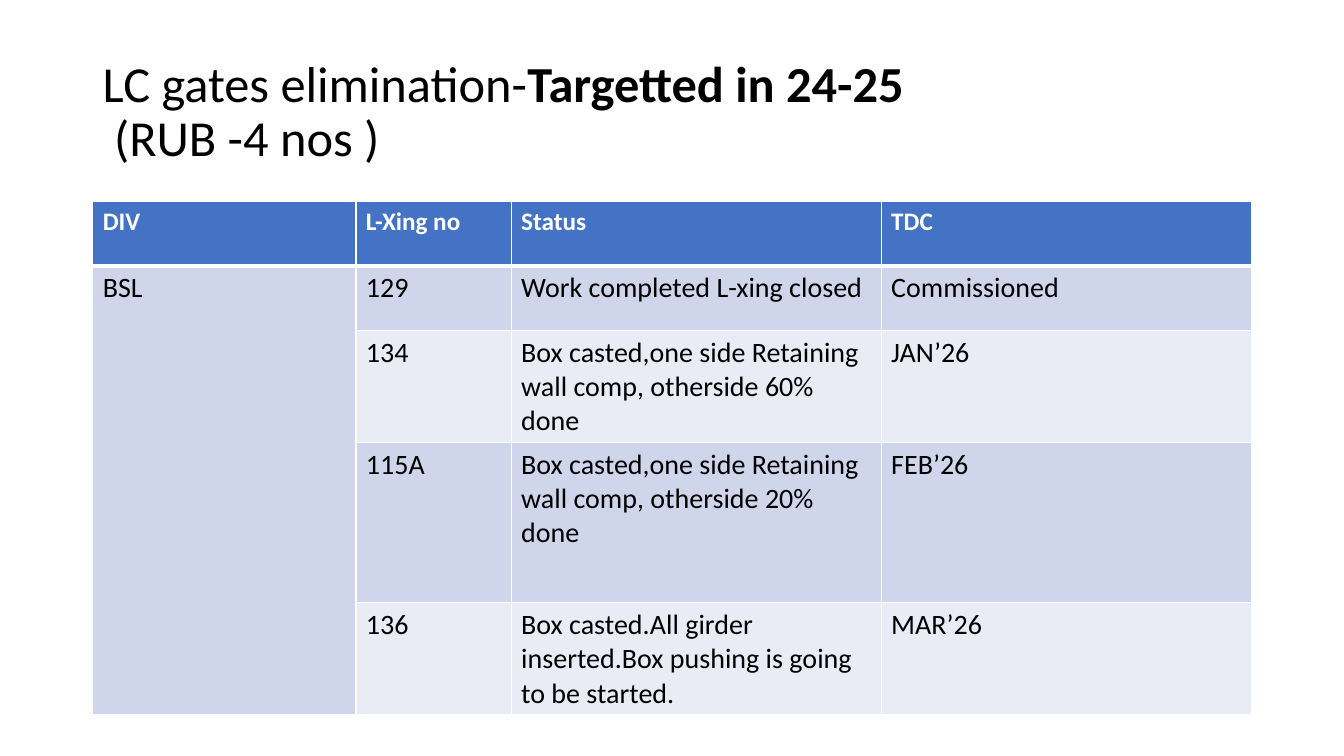
import pptx
import pptx.dml.color
import pptx.enum.text
import pptx.oxml.ns
import pptx.util
from lxml import etree

RGBColor = pptx.dml.color.RGBColor
BLACK = RGBColor(0x00, 0x00, 0x00)
WHITE = RGBColor(0xFF, 0xFF, 0xFF)
HEADER_BLUE = RGBColor(0x44, 0x72, 0xC4)
BANDS = [RGBColor(0xCF, 0xD5, 0xEA), RGBColor(0xE9, 0xEB, 0xF5)]

LEFT, WIDTH = 0.92, 11.5
COLUMNS = [2.61, 1.54, 3.67, 3.67]
ROWS = [0.64, 0.64, 1.11, 1.59, 1.11]


def add_text(para, text, size=20, bold=False, color=BLACK):
    span = para.add_run()
    span.text = text
    span.font.name = "Calibri"
    span.font.size = pptx.util.Pt(size)
    span.font.bold = bold
    span.font.color.rgb = color


def add_border(cell, side, points):
    qn = pptx.oxml.ns.qn
    line = etree.SubElement(cell._tc.get_or_add_tcPr(), qn("a:" + side),
                            w=str(pptx.util.Pt(points)))
    fill = etree.SubElement(line, qn("a:solidFill"))
    etree.SubElement(fill, qn("a:srgbClr"), val=str(WHITE))


deck = pptx.Presentation()
deck.slide_width = pptx.util.Inches(13.33)
deck.slide_height = pptx.util.Inches(7.5)
page = deck.slides.add_slide(deck.slide_layouts[6])

# Title
box = page.shapes.add_textbox(*map(pptx.util.Inches, (LEFT, 0.4, WIDTH, 1.45)))
box.text_frame.word_wrap = True
box.text_frame.vertical_anchor = pptx.enum.text.MSO_ANCHOR.MIDDLE
para = box.text_frame.paragraphs[0]
para.line_spacing = 0.9
add_text(para, "LC gates elimination-", size=36)
add_text(para, "Targetted in 24-25", size=36, bold=True)
para.add_line_break()
add_text(para, " (RUB -4 nos )", size=36)

# Table of level crossings
crossings = [
    ["DIV", "L-Xing no", "Status", "TDC"],
    ["BSL", "129", "Work completed L-xing closed", "Commissioned"],
    ["", "134", "Box casted,one side Retaining wall comp, otherside 60% done", "JAN’26"],
    ["", "115A", "Box casted,one side Retaining wall comp, otherside 20% done", "FEB’26"],
    ["", "136", "Box casted.All girder inserted.Box pushing is going to be started.", "MAR’26"],
]
table = page.shapes.add_table(
    len(ROWS), len(COLUMNS),
    *map(pptx.util.Inches, (LEFT, 2, WIDTH, sum(ROWS)))).table
for column, width in zip(table.columns, COLUMNS):
    column.width = pptx.util.Inches(width)
for row, height in zip(table.rows, ROWS):
    row.height = pptx.util.Inches(height)

for r, texts in enumerate(crossings):
    header = r == 0
    for c, text in enumerate(texts):
        cell = table.cell(r, c)
        for side in ("lnL", "lnR", "lnT", "lnB"):
            heavy = (header and side == "lnB") or (r == 1 and side == "lnT")
            add_border(cell, side, 3 if heavy else 1)
        # The division column keeps one colour for its merged rows
        band = 0 if c == 0 else (r - 1) % 2
        cell.fill.solid()
        cell.fill.fore_color.rgb = HEADER_BLUE if header else BANDS[band]
        if text:
            add_text(cell.text_frame.paragraphs[0], text, size=18 if header else 20,
                     bold=header, color=WHITE if header else BLACK)
table.cell(1, 0).merge(table.cell(len(ROWS) - 1, 0))

deck.save("out.pptx")
